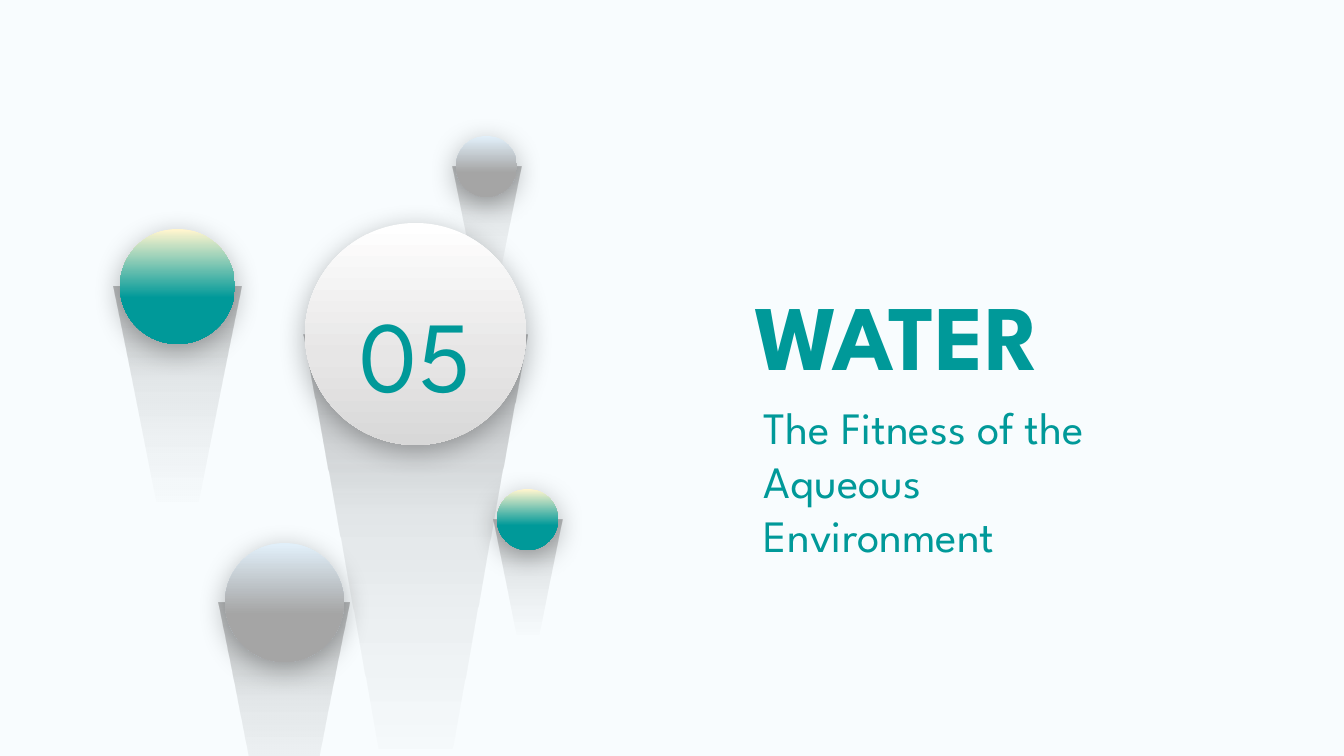
from lxml import etree
from pptx import Presentation
from pptx.dml.color import RGBColor
from pptx.enum.shapes import MSO_SHAPE
from pptx.enum.text import MSO_ANCHOR, MSO_AUTO_SIZE, PP_ALIGN
from pptx.oxml import parse_xml
from pptx.oxml.ns import nsdecls, qn
from pptx.util import Pt

PX = 914400 / 100.8
FONT = "League Spartan"
COLORS = {"background": "F8FCFE", "teal": "009999", "cream": "FFF5CE",
          "ice": "E1EFF9", "gray": "A5A5A5", "white": "FFFFFF",
          "silver": "E7E6E6", "steel": "D8D8D8", "black": "000000",
          "charcoal": "262626"}

# Gradient stops: position %, colour, opacity %
BEAM = [(0, "charcoal", 30), (30, "black", 8), (50, "black", 4),
        (70, "black", 0), (100, "black", 0)]
ICE = [(0, "ice", 100), (1, "ice", 100), (60, "gray", 100), (100, "gray", 100)]
TEAL = [(0, "cream", 100), (1, "cream", 100), (60, "teal", 100), (100, "teal", 100)]
PEARL = [(0, "white", 100), (60, "silver", 100), (100, "steel", 100)]

# Ball box, beam box, ball gradient, label; from back to front
BALLS = [
    ((456, 136, 61, 61), (453, 167, 68, 167), ICE, None),
    ((305, 223, 221, 222), (304, 335, 224, 599), PEARL, "05"),
    ((225, 543, 119, 119), (219, 603, 131, 323), ICE, None),
    ((497, 489, 61, 61), (494, 520, 68, 167), TEAL, None),
    ((120, 229, 115, 115), (114, 287, 127, 311), TEAL, None),
]


def px(n):
    return round(n * PX)


class Deck:
    def __init__(self):
        self.prs = Presentation()
        self.prs.slide_width, self.prs.slide_height = px(1344), px(756)
        self.s = self.prs.slides.add_slide(self.prs.slide_layouts[5])
        fill = self.s.background.fill
        fill.solid()
        fill.fore_color.rgb = RGBColor.from_string(COLORS["background"])

    def text(self, sp, words, size, anchor, align=PP_ALIGN.LEFT, bold=False, spacing=1.0):
        tf = sp.text_frame
        tf.word_wrap = True
        tf.auto_size = MSO_AUTO_SIZE.NONE
        tf.vertical_anchor = anchor
        p = tf.paragraphs[0]
        p.alignment, p.line_spacing = align, spacing
        r = p.add_run()
        r.text = words
        r.font.name, r.font.size, r.font.bold = FONT, Pt(size), bold
        r.font.color.rgb = RGBColor.from_string(COLORS["teal"])

    def title(self, box, words, size):
        sp = self.s.shapes.title
        sp.left, sp.top, sp.width, sp.height = map(px, box)
        self.text(sp, words, size, MSO_ANCHOR.BOTTOM, bold=True)

    def textbox(self, box, words, size):
        sp = self.s.shapes.add_textbox(*map(px, box))
        self.text(sp, words, size, MSO_ANCHOR.TOP)

    def gradient(self, sp, stops):
        """Fill from top to bottom, with no outline."""
        sp.shadow.inherit = False
        sp.line.fill.background()
        sp.fill.background()
        gs = "".join(
            f'<a:gs pos="{pos * 1000}"><a:srgbClr val="{COLORS[color]}">'
            f'<a:alpha val="{alpha * 1000}"/></a:srgbClr></a:gs>'
            for pos, color, alpha in stops)
        spPr = sp.element.spPr
        spPr.replace(spPr.find(qn("a:noFill")), parse_xml(
            f'<a:gradFill {nsdecls("a")} rotWithShape="1"><a:gsLst>{gs}</a:gsLst>'
            '<a:lin ang="5400000" scaled="0"/></a:gradFill>'))

    def shadow(self, sp):
        effects = sp.element.spPr.find(qn("a:effectLst"))
        outer = etree.SubElement(effects, qn("a:outerShdw"), blurRad=str(Pt(20)),
                                 dist=str(Pt(5)), dir="5400000", algn="t",
                                 rotWithShape="0")
        color = etree.SubElement(outer, qn("a:srgbClr"), val=COLORS["black"])
        etree.SubElement(color, qn("a:alpha"), val="30000")

    def beam(self, group, box):
        """Beam narrowing along a cubic curve from its top edge to a tip."""
        x, y, w, h = box
        right = []
        for i in range(13):
            t = i / 12
            a, b, c, d = (1 - t) ** 3, 3 * t * (1 - t) ** 2, 3 * t * t * (1 - t), t ** 3
            right.append((a + 0.83 * b + 0.53 * c + 0.5 * d, 0.33 * b + c + d))
        left = [(1 - u, v) for u, v in reversed(right[:-1])]
        points = [(px(x + u * w), px(y + v * h)) for u, v in right + left]
        builder = group.shapes.build_freeform(*points[0])
        builder.add_line_segments(points[1:], close=True)
        self.gradient(builder.convert_to_shape(), BEAM)

    def ball(self, box, beam_box, stops, label):
        group = self.s.shapes.add_group_shape()
        self.beam(group, beam_box)
        sp = group.shapes.add_shape(MSO_SHAPE.OVAL, *map(px, box))
        self.gradient(sp, stops)
        self.shadow(sp)
        if label:
            self.text(sp, label, 72, MSO_ANCHOR.MIDDLE, PP_ALIGN.CENTER, spacing=1.3)


def main():
    deck = Deck()
    # Balls with their beams
    for ball in BALLS:
        deck.ball(*ball)
    # Section heading
    deck.title((744, 272, 524, 122), "WATER", 66)
    deck.textbox((754, 395, 391, 209), "The Fitness of the Aqueous Environment", 32)
    deck.prs.save("out.pptx")


if __name__ == "__main__":
    main()
